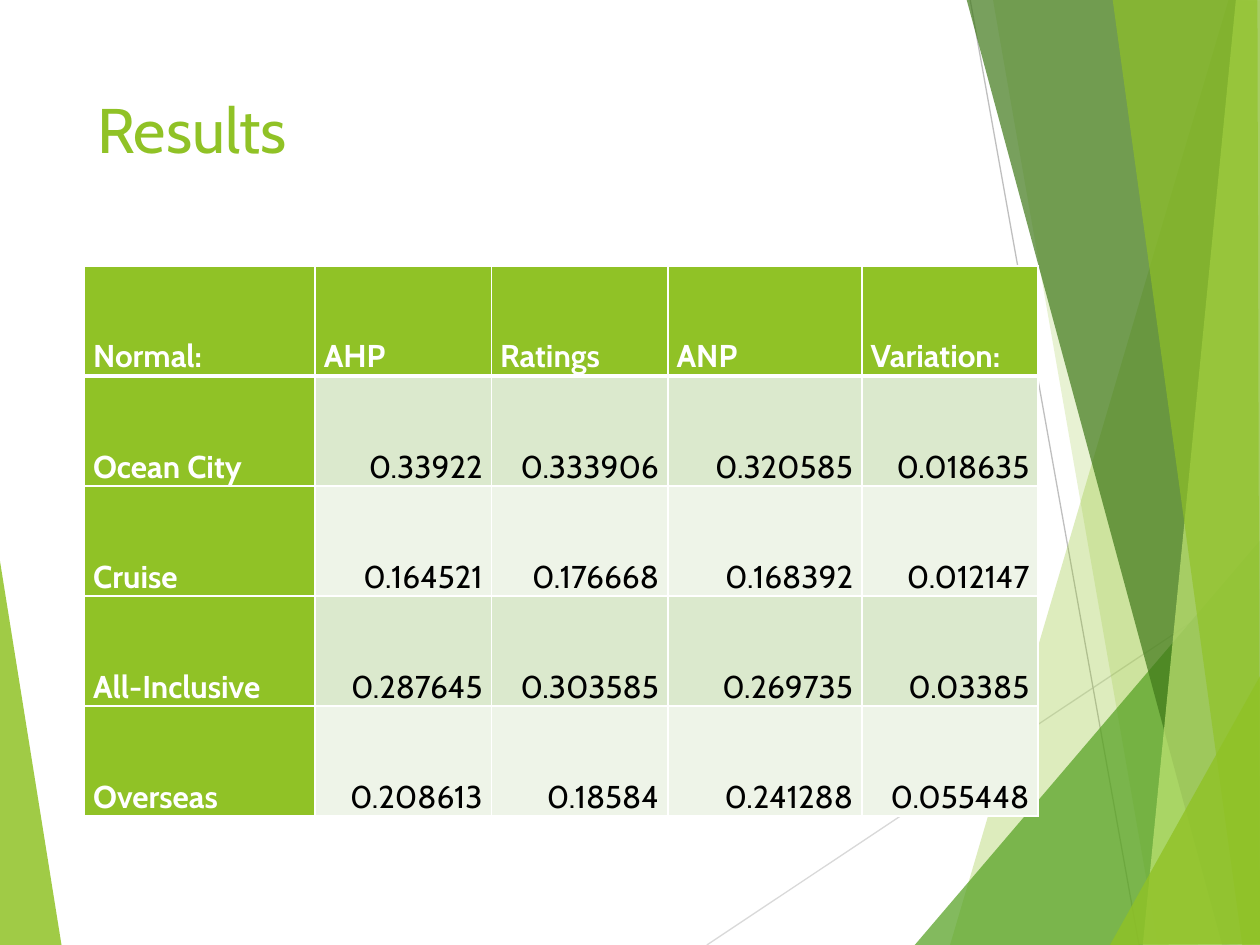
from dataclasses import dataclass

from lxml.etree import SubElement
from pptx import Presentation
from pptx.dml.color import RGBColor
from pptx.enum.shapes import MSO_CONNECTOR
from pptx.enum.text import MSO_ANCHOR, PP_ALIGN
from pptx.oxml.ns import qn
from pptx.util import Inches, Pt

FONT = "Cabin"
GREEN, WHITE, BLACK = "90C226", "FFFFFF", "000000"
BANDS = ("DBE9CD", "EEF4E8")


@dataclass
class Facet:
    color: str
    alpha: int
    points: list[tuple[float, float]]


@dataclass
class Ray:
    color: str
    start: tuple[float, float]
    end: tuple[float, float]


DECOR = [
    Facet(GREEN, 85, [(-0.01, 4.39), (0.49, 7.51), (-0.01, 7.5)]),
    Ray("D9D9D9", (5.61, 7.5), (10.01, 4.57)),
    Ray("BFBFBF", (7.7, 0), (9.04, 7.5)),
    Facet(GREEN, 30, [(9.75, 0), (7.54, 7.5), (10.02, 7.51), (10.01, 0.01)]),
    Facet(GREEN, 20, [(7.88, -0.01), (9.19, 7.5), (10.01, 7.5), (10.01, -0.01)]),
    Facet("54A021", 72, [(7.26, 7.5), (10, 4.29), (10.01, 7.5)]),
    Facet("3F7819", 70, [(7.67, -0.01), (9.7, 7.5), (10.01, 7.49), (10.01, -0.01)]),
    Facet("C0E474", 70, [(9.81, -0.01), (9.07, 7.5), (10.01, 7.5), (10, -0.01)]),
    Facet(GREEN, 65, [(8.83, -0.01), (9.86, 7.5), (10, 7.5), (9.98, -0.01)]),
    Facet(GREEN, 80, [(8.81, 7.5), (10.01, 5.35), (10.01, 7.49)]),
]

ROWS = [
    ("Normal:", "AHP", "Ratings", "ANP", "Variation:"),
    ("Ocean City", "0.33922", "0.333906", "0.320585", "0.018635"),
    ("Cruise", "0.164521", "0.176668", "0.168392", "0.012147"),
    ("All-Inclusive", "0.287645", "0.303585", "0.269735", "0.03385"),
    ("Overseas", "0.208613", "0.18584", "0.241288", "0.055448"),
]
WIDTHS = (1.83, 1.4, 1.4, 1.54, 1.4)
HEIGHT = 4.37 / len(ROWS)


def paint(fill, color: str) -> None:
    fill.solid()
    fill.fore_color.rgb = RGBColor.from_string(color)


def style(para, size: int, color: str, bold: bool = False) -> None:
    font = para.font
    font.name, font.size, font.bold = FONT, Pt(size), bold
    font.color.rgb = RGBColor.from_string(color)


def draw_facet(slide, facet: Facet) -> None:
    first, *rest = [(Inches(x), Inches(y)) for x, y in facet.points]
    pen = slide.shapes.build_freeform(*first)
    pen.add_line_segments(rest, close=True)
    shape = pen.convert_to_shape()
    shape.shadow.inherit = False
    shape.line.fill.background()
    paint(shape.fill, facet.color)
    tint = shape._element.spPr.find(qn("a:solidFill"))[0]
    SubElement(tint, qn("a:alpha"), val=str(facet.alpha * 1000))


def draw_ray(slide, ray: Ray) -> None:
    ends = [Inches(v) for v in ray.start + ray.end]
    line = slide.shapes.add_connector(MSO_CONNECTOR.STRAIGHT, *ends)
    line.line.width = Pt(0.75)
    paint(line.line.fill, ray.color)
    SubElement(line._element.spPr, qn("a:effectLst"))


def add_borders(cell, top: float, bottom: float) -> None:
    props = cell._tc.get_or_add_tcPr()
    for side, width in (("L", 1), ("R", 1), ("T", top), ("B", bottom)):
        edge = SubElement(props, qn(f"a:ln{side}"), w=str(Pt(width)))
        fill = SubElement(edge, qn("a:solidFill"))
        SubElement(fill, qn("a:srgbClr"), val=WHITE)


def fill_cell(cell, text: str, row: int, col: int) -> None:
    label = row == 0 or col == 0
    add_borders(cell, 3 if row == 1 else 1, 3 if row == 0 else 1)
    paint(cell.fill, GREEN if label else BANDS[(row - 1) % 2])
    cell.margin_left = cell.margin_right = Inches(0.07)
    cell.margin_top = cell.margin_bottom = 0
    cell.vertical_anchor = MSO_ANCHOR.BOTTOM
    cell.text = text
    para = cell.text_frame.paragraphs[0]
    para.line_spacing = 1.15
    para.alignment = PP_ALIGN.LEFT if label else PP_ALIGN.RIGHT
    style(para, 18, WHITE if label else BLACK, label)


def draw_table(slide) -> None:
    box = (Inches(v) for v in (0.67, 2.11, sum(WIDTHS), HEIGHT * len(ROWS)))
    table = slide.shapes.add_table(len(ROWS), len(WIDTHS), *box).table
    for col, width in zip(table.columns, WIDTHS):
        col.width = Inches(width)
    for r, texts in enumerate(ROWS):
        table.rows[r].height = Inches(HEIGHT)
        for c, text in enumerate(texts):
            fill_cell(table.cell(r, c), text, r, c)


def set_title(slide, text: str) -> None:
    title = slide.shapes.title
    title.left, title.top = Inches(0.67), Inches(0.67)
    title.width, title.height = Inches(6.94), Inches(1.44)
    frame = title.text_frame
    frame.text = text
    frame.vertical_anchor = MSO_ANCHOR.TOP
    frame.paragraphs[0].alignment = PP_ALIGN.LEFT
    style(frame.paragraphs[0], 36, GREEN)


def main() -> None:
    deck = Presentation()
    deck.slide_width, deck.slide_height = Inches(10), Inches(7.5)
    slide = deck.slides.add_slide(deck.slide_layouts[5])
    paint(slide.background.fill, WHITE)
    for item in DECOR:
        if isinstance(item, Facet):
            draw_facet(slide, item)
        else:
            draw_ray(slide, item)
    set_title(slide, "Results")
    draw_table(slide)
    deck.save("out.pptx")


if __name__ == "__main__":
    main()
